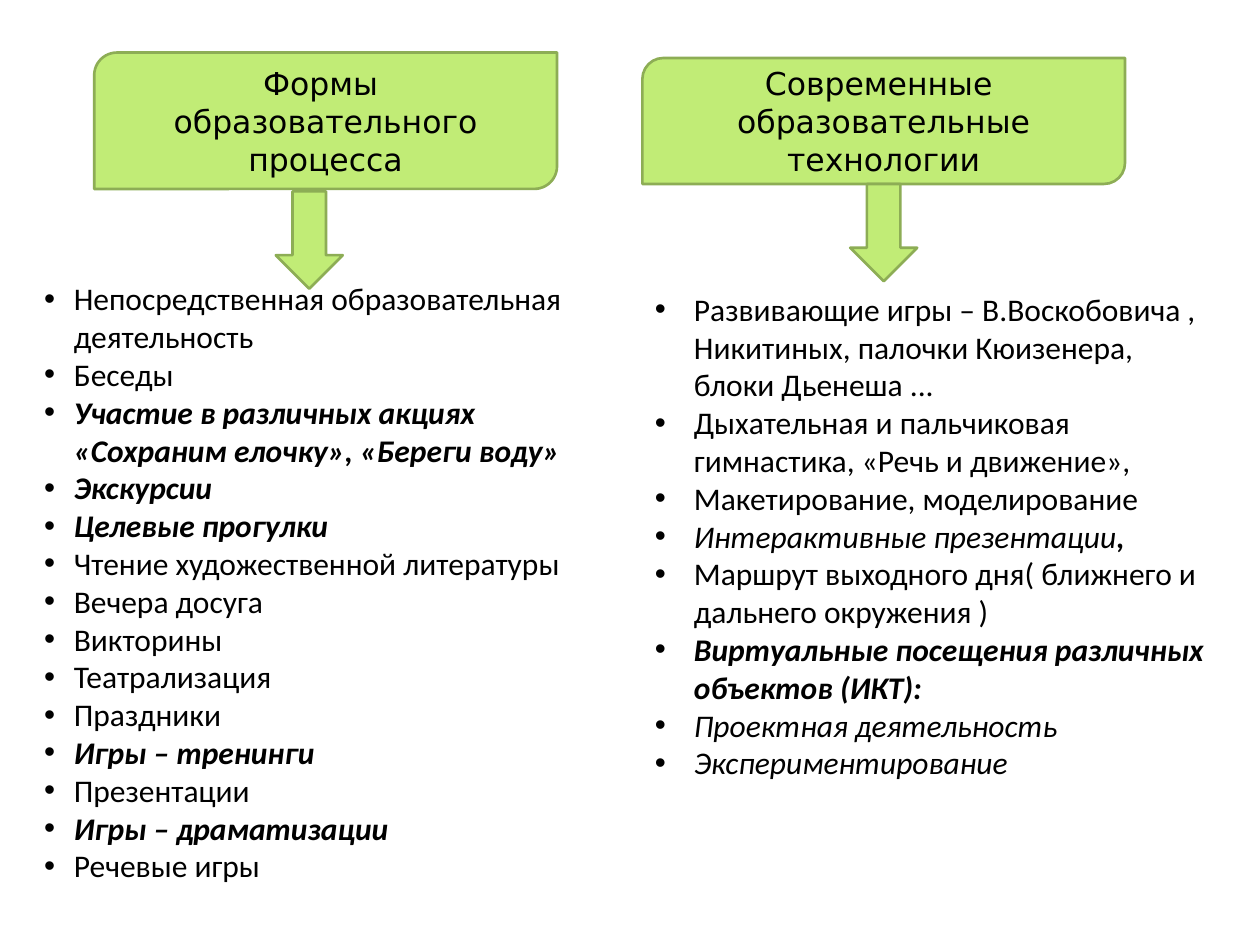
"""Two columns of bullets under headed arrows."""
from lxml.etree import SubElement as Sub
from pptx import Presentation
from pptx.dml.color import RGBColor as Rgb
from pptx.enum.shapes import MSO_SHAPE as Kind
from pptx.enum.text import MSO_ANCHOR as Anchor, MSO_AUTO_SIZE as Auto, PP_ALIGN as Align
from pptx.oxml.ns import qn
from pptx.util import Cm, Pt

HUES = {"fill": "C1EC76", "line": "8DAD55", "ink": "000000"}


class Deck:
    def __init__(self):
        self.prs = Presentation()
        self.prs.slide_width, self.prs.slide_height = Cm(25.4), Cm(19.05)
        self.slide = self.prs.slides.add_slide(self.prs.slide_layouts[6])

    def hue(self, name):
        return Rgb.from_string(HUES[name])

    def put(self, para, text, face, style=""):
        run = para.add_run()
        run.text = text
        font = run.font
        font.name, font.size = face, Pt(18)
        font.bold, font.italic = "b" in style, "i" in style
        font.color.rgb = self.hue("ink")

    def shape(self, kind, box):
        shape = self.slide.shapes.add_shape(kind, *map(Cm, box))
        shape.shadow.inherit = False
        shape.fill.solid()
        shape.fill.fore_color.rgb = self.hue("fill")
        shape.line.color.rgb = self.hue("line")
        shape.line.width = Pt(1.5)
        return shape

    def head(self, box, lines):
        frame = self.shape(Kind.ROUND_2_DIAG_RECTANGLE, box).text_frame
        frame.word_wrap = True
        frame.vertical_anchor = Anchor.MIDDLE
        frame.margin_left = frame.margin_right = Cm(0.25)
        for num, line in enumerate(lines):
            para = frame.add_paragraph() if num else frame.paragraphs[0]
            para.alignment = Align.CENTER
            self.put(para, line, "DejaVu Sans")

    def arrow(self, left, top):
        self.shape(Kind.DOWN_ARROW, (left, top, 1.35, 1.96))

    def bullet(self, para, indent):
        props = para._p.get_or_add_pPr()
        props.set("marL", str(Cm(indent)))
        props.set("indent", str(-Cm(indent)))
        tint = Sub(props, qn("a:buClr"))
        Sub(tint, qn("a:srgbClr")).set("val", HUES["ink"])
        Sub(props, qn("a:buFont")).set("typeface", "Arial")
        Sub(props, qn("a:buChar")).set("char", "•")

    def items(self, box, indent, right, rows):
        frame = self.slide.shapes.add_textbox(*map(Cm, box)).text_frame
        frame.word_wrap = True
        frame.auto_size = Auto.SHAPE_TO_FIT_TEXT
        frame.margin_left, frame.margin_right = Cm(0.25), Cm(right)
        for num, row in enumerate(rows):
            para = frame.add_paragraph() if num else frame.paragraphs[0]
            self.bullet(para, indent)
            for text, style in row:
                self.put(para, text, "Calibri", style)


FORMS = [
    [("Непосредственная образовательная деятельность", "")],
    [("Беседы", "")],
    [("Участие в различных акциях «Сохраним елочку», «Береги воду»", "bi")],
    [("Экскурсии", "bi")],
    [("Целевые прогулки", "bi")],
    [("Чтение художественной литературы", "")],
    [("Вечера досуга", "")],
    [("Викторины", "")],
    [("Театрализация", "")],
    [("Праздники", "")],
    [("Игры – тренинги", "bi")],
    [("Презентации", "")],
    [("Игры – драматизации", "bi")],
    [("Речевые игры", "")],
]
TECHS = [
    [("Развивающие игры – В.Воскобовича , Никитиных, палочки Кюизенера, блоки Дьенеша ...", "")],
    [("Дыхательная и пальчиковая гимнастика, «Речь и движение»,", "")],
    [("Макетирование, моделирование", "")],
    [("Интерактивные презентации", "i"), (",", "bi")],
    [("Маршрут выходного дня( ближнего и дальнего окружения )", "")],
    [("Виртуальные посещения различных объектов (ИКТ):", "bi")],
    [("Проектная деятельность", "i")],
    [("Экспериментирование", "i")],
]


def main():
    deck = Deck()
    deck.head((1.9, 1.06, 9.33, 2.75), ["Формы ", "образовательного", "процесса"])
    deck.head((12.95, 1.17, 9.73, 2.54), ["Современные ", "образовательные", "технологии"])
    deck.items((0.64, 5.51, 11.86, 12.57), 0.6, 0.25, FORMS)
    deck.items((12.95, 5.72, 12.04, 11.02), 0.79, 0.65, TECHS)
    deck.arrow(5.56, 3.86)
    deck.arrow(17.14, 3.71)
    deck.prs.save("out.pptx")


if __name__ == "__main__":
    main()
